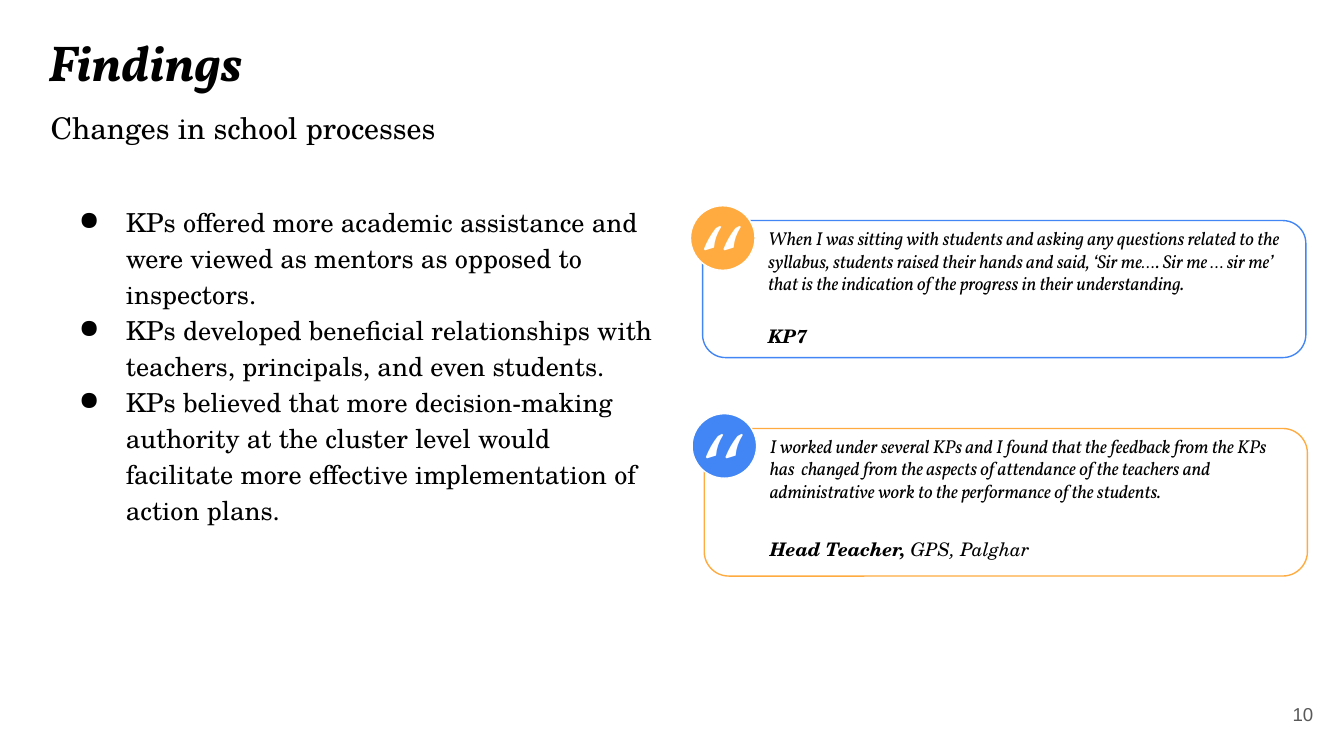
"""Build the findings slide: three bullet points beside two quote cards."""
from dataclasses import dataclass

from lxml import etree
from pptx import Presentation
from pptx.dml.color import RGBColor
from pptx.enum.shapes import MSO_SHAPE
from pptx.enum.text import MSO_ANCHOR, PP_ALIGN
from pptx.oxml.ns import qn
from pptx.util import Cm, Pt

ROUND = MSO_SHAPE.ROUNDED_RECTANGLE
OVAL = MSO_SHAPE.OVAL
TOP = MSO_ANCHOR.TOP
MIDDLE = MSO_ANCHOR.MIDDLE
LEFT = PP_ALIGN.LEFT
RIGHT = PP_ALIGN.RIGHT


@dataclass(frozen=True)
class Theme:
    black: str = "000000"
    white: str = "FFFFFF"
    gray: str = "595959"
    blue: str = "4285F4"
    gold: str = "FFAB40"
    head: str = "Vollkorn"
    body: str = "TeX Gyre Schola"
    quote: str = "TeX Gyre Pagella"
    plain: str = "Arial"
    title: float = 27
    sub: float = 16
    point: float = 14
    small: float = 10
    mark: float = 50
    line: float = 0.75


THEME = Theme()


@dataclass(frozen=True)
class Box:
    left: float
    top: float
    width: float
    height: float

    def place(self) -> tuple:
        return Cm(self.left), Cm(self.top), Cm(self.width), Cm(self.height)


@dataclass(frozen=True)
class Style:
    font: str
    size: float
    color: str = THEME.black
    bold: bool = False
    italic: bool = False


@dataclass(frozen=True)
class Card:
    box: Box
    edge: str
    badge: str
    text: str
    wide: float
    name: str
    place: str
    drop: float
    span: float


QUOTE = Style(THEME.head, THEME.small, italic=True)
NAME = Style(THEME.body, THEME.small, bold=True, italic=True)
PLACE = Style(THEME.body, THEME.small, italic=True)
MARK = Style(THEME.quote, THEME.mark, THEME.white)
POINT = Style(THEME.body, THEME.point)

POINTS = (
    "KPs offered more academic assistance and were viewed as mentors as opposed to inspectors.",
    "KPs developed beneficial relationships with teachers, principals, and even students.",
    "KPs believed that more decision-making authority at the cluster level would "
    "facilitate more effective implementation of action plans.",
)

CARDS = (
    Card(Box(13.31, 8.1, 11.4, 2.79), THEME.gold, THEME.blue,
         "I worked under several KPs and I found that the feedback from the KPs has  changed "
         "from the aspects of attendance of the teachers and  administrative work to the "
         "performance of the students.",
         9.93, "Head Teacher,", " GPS, Palghar", 1.86, 6.65),
    Card(Box(13.28, 4.17, 11.4, 2.59), THEME.blue, THEME.gold,
         "When I was sitting with students and asking any questions related to the syllabus, "
         "students raised their hands and said, ‘Sir me…. Sir me … sir me’ that is the "
         "indication of the progress in their understanding.",
         10.41, "KP7", "", 1.75, 1.35),
)


def paint(run, style: Style) -> None:
    """Apply a style to a run."""
    font = run.font
    font.name, font.size = style.font, Pt(style.size)
    font.bold, font.italic = style.bold, style.italic
    font.color.rgb = RGBColor.from_string(style.color)


def write(slide, box: Box, text: str, style: Style, anchor=TOP, align=LEFT):
    """Add a wrapped text box, one paragraph a line, and return its frame."""
    frame = slide.shapes.add_textbox(*box.place()).text_frame
    frame.word_wrap = True
    frame.vertical_anchor = anchor
    frame.margin_left = frame.margin_right = Cm(0.25)
    frame.margin_top = frame.margin_bottom = Cm(0.25)
    frame.text = text
    for para in frame.paragraphs:
        para.alignment = align
        for run in para.runs:
            paint(run, style)
    return frame


def bullet(para) -> None:
    """Give a paragraph a hanging round bullet."""
    para.line_spacing = 1.15
    props = para._p.get_or_add_pPr()
    props.set("marL", str(Cm(1.27)))
    props.set("indent", str(Cm(-0.89)))
    tint = etree.SubElement(props, qn("a:buClr"))
    etree.SubElement(tint, qn("a:srgbClr")).set("val", THEME.black)
    etree.SubElement(props, qn("a:buChar")).set("char", "●")


def shape(slide, kind, box: Box, fill: str, line: str) -> None:
    """Add a filled, outlined shape without a shadow."""
    item = slide.shapes.add_shape(kind, *box.place())
    item.shadow.inherit = False
    item.fill.solid()
    item.fill.fore_color.rgb = RGBColor.from_string(fill)
    item.line.color.rgb = RGBColor.from_string(line)
    item.line.width = Pt(THEME.line)


def draw(slide, card: Card) -> None:
    """Draw a quote card with its badge, text and speaker."""
    left, top = card.box.left, card.box.top
    shape(slide, ROUND, card.box, THEME.white, card.edge)
    shape(slide, OVAL, Box(left - 0.23, top - 0.28, 1.22, 1.22), card.badge, THEME.white)
    write(slide, Box(left + 0.99, top - 0.13, card.wide, 2.24), card.text, QUOTE)
    write(slide, Box(left - 0.3, top - 0.66, 1.35, 1.6), "“", MARK)
    frame = write(slide, Box(left + 0.99, top + card.drop, card.span, 0.94), card.name, NAME)
    if card.place:
        run = frame.paragraphs[0].add_run()
        run.text = card.place
        paint(run, PLACE)


def main() -> None:
    """Build and save the slide."""
    deck = Presentation()
    deck.slide_width, deck.slide_height = Cm(25.4), Cm(14.29)
    slide = deck.slides.add_slide(deck.slide_layouts[6])
    write(slide, Box(23.55, 12.95, 1.52, 1.09), "10",
          Style(THEME.plain, THEME.small, THEME.gray), MIDDLE, RIGHT)
    write(slide, Box(0.66, 0.33, 11.53, 1.6), "Findings",
          Style(THEME.head, THEME.title, bold=True, italic=True))
    write(slide, Box(0.71, 1.83, 23.67, 1.09), "Changes in school processes",
          Style(THEME.body, THEME.sub))
    frame = write(slide, Box(0.86, 3.56, 11.84, 6.4), "\n".join(POINTS), POINT)
    for para in frame.paragraphs:
        bullet(para)
    for card in CARDS:
        draw(slide, card)
    deck.save("out.pptx")


if __name__ == "__main__":
    main()
